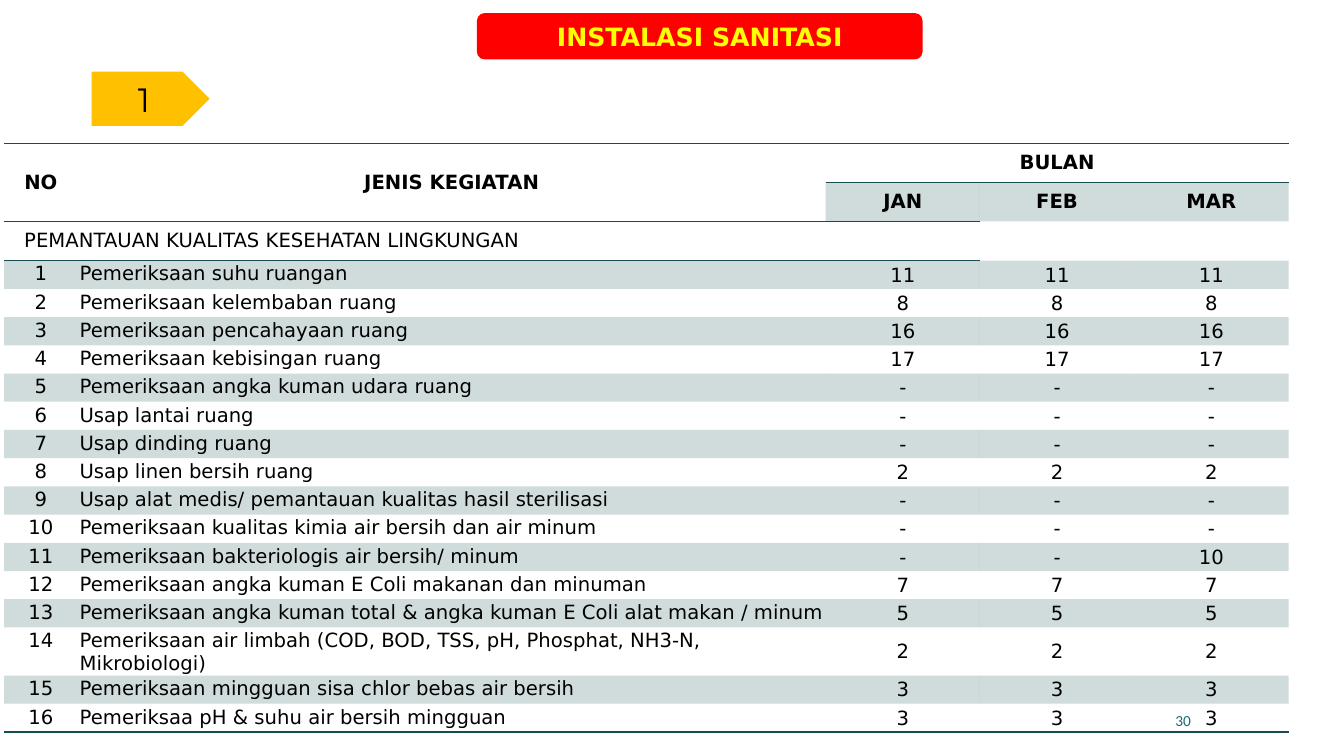
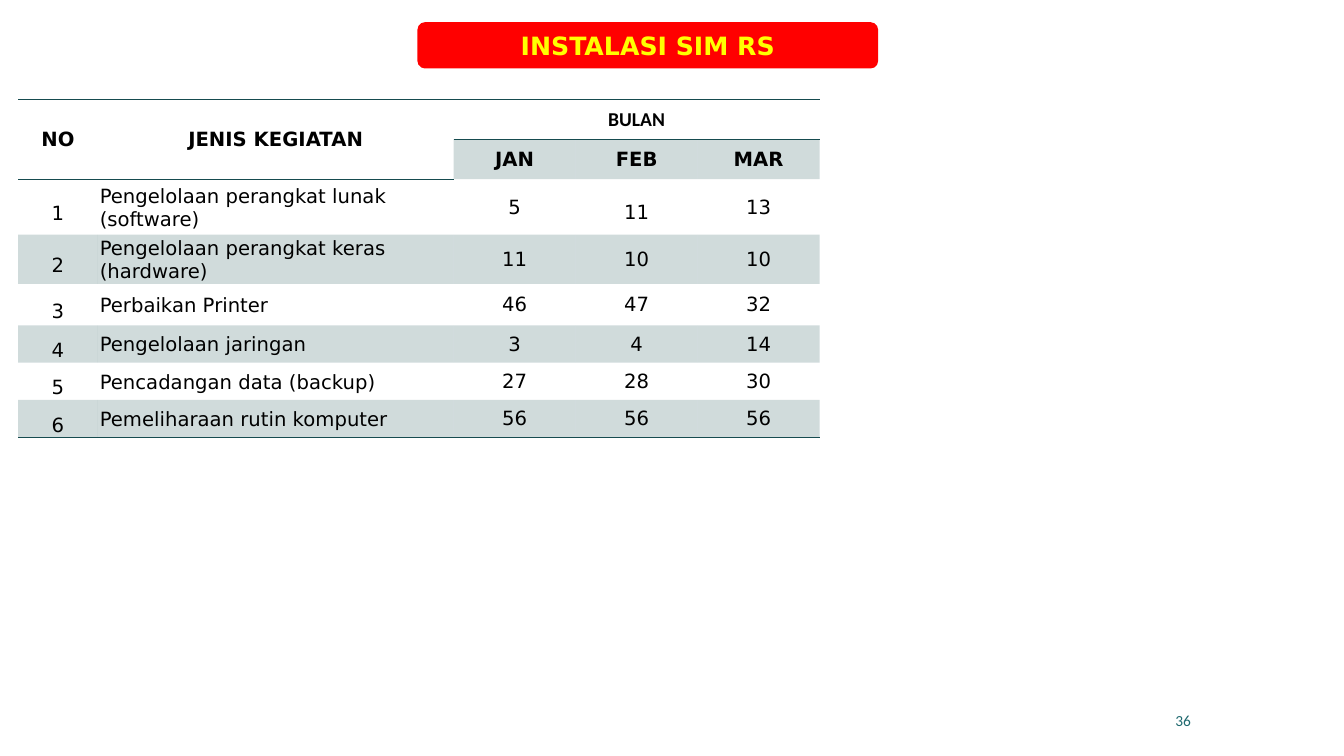
import dataclasses

import lxml.etree
import pptx
import pptx.dml.color
import pptx.enum.shapes
import pptx.enum.text
import pptx.oxml.ns
import pptx.util

PX = 9144  # EMU per px, 100 px to the inch
SHAPE = pptx.enum.shapes.MSO_SHAPE
ALIGN = pptx.enum.text.PP_ALIGN
ANCHOR = pptx.enum.text.MSO_ANCHOR
NO_GRID_STYLE = "{2D5ABB26-0587-4C30-8999-92F81FD0307C}"


@dataclasses.dataclass(frozen=True)
class Theme:
    text: str = "000000"
    line: str = "164B4F"
    band_alpha: int = 20
    title_fill: str = "FF0000"
    title_text: str = "FFFF00"
    tag_fill: str = "FFC000"
    page: str = "1F696F"
    body_font: str = "DejaVu Sans"
    tag_font: str = "Montserrat"
    page_font: str = "Calibri"
    body_size: int = 14
    title_size: int = 18
    tag_size: int = 24
    page_size: int = 11
    header_inset: tuple = (20, 8, 20, 8)
    label_inset: tuple = (2, 2, 2, 0)
    value_inset: tuple = (1, 1, 1, 0)


def rgb(value):
    return pptx.dml.color.RGBColor.from_string(value)


def set_all(obj, values):
    for name, value in values.items():
        setattr(obj, name, value)


def sub(parent, tag, **attrs):
    return lxml.etree.SubElement(parent, pptx.oxml.ns.qn(tag), attrs)


class Deck:
    """Holds the presentation, its theme and the slide being filled."""

    def __init__(self, theme):
        self.theme = theme
        self.prs = pptx.Presentation()
        self.prs.slide_width, self.prs.slide_height = 1333 * PX, 750 * PX
        self.s = None

    def slide(self):
        self.s = self.prs.slides.add_slide(self.prs.slide_layouts[6])

    def put_text(self, tf, text, size, font, color, bold=False,
                 align=ALIGN.CENTER, spacing=None):
        p = tf.paragraphs[0]
        set_all(p, {"alignment": align, "line_spacing": spacing})
        r = p.add_run()
        r.text = text
        set_all(r.font, {"size": pptx.util.Pt(size), "name": font, "bold": bold})
        r.font.color.rgb = rgb(color)

    def shape(self, kind, box, fill, text, *style):
        sp = self.s.shapes.add_shape(kind, *(v * PX for v in box))
        sp.shadow.inherit = False
        sp.fill.solid()
        sp.fill.fore_color.rgb = rgb(fill)
        sp.line.fill.background()
        sp.text_frame.vertical_anchor = ANCHOR.MIDDLE
        self.put_text(sp.text_frame, text, *style)

    def title(self, text, left, top, width):
        t = self.theme
        self.shape(SHAPE.ROUNDED_RECTANGLE, (left, top, width, 46), t.title_fill,
                   text, t.title_size, t.body_font, t.title_text, True)

    def tag(self, text, left, top):
        t = self.theme
        self.shape(SHAPE.PENTAGON, (left, top, 117, 54), t.tag_fill,
                   text, t.tag_size, t.tag_font, t.text)

    def page_number(self, number):
        t = self.theme
        sp = self.s.shapes.add_textbox(880 * PX, 695 * PX, 311 * PX, 40 * PX)
        set_all(sp.text_frame, {"word_wrap": True, "vertical_anchor": ANCHOR.MIDDLE})
        self.put_text(sp.text_frame, str(number), t.page_size, t.page_font, t.page,
                      align=ALIGN.RIGHT)

    def rule(self, cell, side):
        """Draws one edge of a cell; call for lnT before lnB, and before filling."""
        ln = sub(cell._tc.get_or_add_tcPr(), f"a:{side}", w=str(pptx.util.Pt(1)))
        sub(sub(ln, "a:solidFill"), "a:srgbClr", val=self.theme.line)

    def fill_cell(self, cell, banded):
        if not banded:
            cell.fill.background()
            return
        cell.fill.solid()
        cell.fill.fore_color.rgb = rgb(self.theme.line)
        color = cell._tc.tcPr.findall(".//" + pptx.oxml.ns.qn("a:srgbClr"))[-1]
        sub(color, "a:alpha", val=str(self.theme.band_alpha * 1000))

    def cell_text(self, cell, text, inset, anchor=ANCHOR.MIDDLE, font=None, **fmt):
        t = self.theme
        sides = ("margin_left", "margin_top", "margin_right", "margin_bottom")
        set_all(cell, dict(zip(sides, (v * PX for v in inset))))
        cell.vertical_anchor = anchor
        if text:
            self.put_text(cell.text_frame, text, t.body_size, font or t.body_font,
                          t.text, **fmt)

    def activity_table(self, left, top, cols, heights, activities, section=None,
                       label_anchor=ANCHOR.MIDDLE, month_font=None, spaced=()):
        """Monthly table; spaced holds the (row, column) cells set at 1.5 lines."""
        t = self.theme
        rows = [("NO", "JENIS KEGIATAN", "BULAN", "", ""),
                ("", "", "JAN", "FEB", "MAR")]
        if section:
            rows.append((section, "", "", "", ""))
        first = len(rows)
        rows += [(str(n), *activity) for n, activity in enumerate(activities, 1)]
        frame = self.s.shapes.add_table(
            len(rows), len(cols), left * PX, top * PX, sum(cols) * PX, sum(heights) * PX)
        table = frame.table
        set_all(table, {"first_row": False, "horz_banding": False})
        table._tbl.tblPr.find(pptx.oxml.ns.qn("a:tableStyleId")).text = NO_GRID_STYLE
        for col, width in zip(table.columns, cols):
            col.width = width * PX
        for row, height in zip(table.rows, heights):
            row.height = height * PX
        merges = [((0, 0), (1, 0)), ((0, 1), (1, 1)), ((0, 2), (0, 4))]
        if section:
            merges.append(((2, 0), (2, 2)))
        for start, end in merges:
            table.cell(*start).merge(table.cell(*end))

        for i, row in enumerate(rows):
            for j, text in enumerate(row):
                cell = table.cell(i, j)
                if i == 0 or (section and i == 2 and j < 3):
                    self.rule(cell, "lnT")
                if i in (0, len(rows) - 1) or (i == 1 and j < 2):
                    self.rule(cell, "lnB")
                self.fill_cell(cell, i % 2 == 1 and not (i == 1 and j < 2))
                if not text:
                    self.cell_text(cell, "", (0, 0, 0, 0))
                elif i < first:
                    is_section = text == section
                    self.cell_text(cell, text, t.header_inset, bold=not is_section,
                                   align=ALIGN.LEFT if is_section else ALIGN.CENTER,
                                   font=month_font if (i, j) == (0, 2) else None)
                else:
                    self.cell_text(cell, text, t.label_inset if j < 2 else t.value_inset,
                                   label_anchor if j < 2 else ANCHOR.MIDDLE,
                                   align=ALIGN.LEFT if j == 1 else ALIGN.CENTER,
                                   spacing=1.5 if (i, j) in spaced else None)


SANITATION = [
    ("Pemeriksaan suhu ruangan", "11", "11", "11"),
    ("Pemeriksaan kelembaban ruang", "8", "8", "8"),
    ("Pemeriksaan pencahayaan ruang", "16", "16", "16"),
    ("Pemeriksaan kebisingan ruang", "17", "17", "17"),
    ("Pemeriksaan angka kuman udara ruang", "-", "-", "-"),
    ("Usap lantai ruang", "-", "-", "-"),
    ("Usap dinding ruang", "-", "-", "-"),
    ("Usap linen bersih ruang", "2", "2", "2"),
    ("Usap alat medis/ pemantauan kualitas hasil sterilisasi", "-", "-", "-"),
    ("Pemeriksaan kualitas kimia air bersih dan air minum", "-", "-", "-"),
    ("Pemeriksaan bakteriologis air bersih/ minum", "-", "-", "10"),
    ("Pemeriksaan angka kuman E Coli makanan dan minuman", "7", "7", "7"),
    ("Pemeriksaan angka kuman total & angka kuman E Coli alat makan / minum",
     "5", "5", "5"),
    ("Pemeriksaan air limbah (COD, BOD, TSS, pH, Phosphat, NH3-N, Mikrobiologi)",
     "2", "2", "2"),
    ("Pemeriksaan mingguan sisa chlor bebas air bersih", "3", "3", "3"),
    ("Pemeriksaa pH & suhu air bersih mingguan", "3", "3", "3"),
]

INFORMATION_SYSTEM = [
    ("Pengelolaan perangkat lunak (software)", "5", "11", "13"),
    ("Pengelolaan perangkat keras (hardware)", "11", "10", "10"),
    ("Perbaikan Printer", "46", "47", "32"),
    ("Pengelolaan jaringan", "3", "4", "14"),
    ("Pencadangan data (backup)", "27", "28", "30"),
    ("Pemeliharaan rutin komputer", "56", "56", "56"),
]


def main():
    deck = Deck(Theme())

    deck.slide()
    deck.activity_table(4, 142, [73, 742] + [153] * 3,
                        [38] * 3 + [28] * len(SANITATION), SANITATION,
                        section="PEMANTAUAN KUALITAS KESEHATAN LINGKUNGAN",
                        label_anchor=ANCHOR.TOP)
    deck.page_number(30)
    deck.title("INSTALASI SANITASI", 473, 13, 442)
    deck.tag("1", 91, 71)

    deck.slide()
    deck.page_number(36)
    deck.activity_table(18, 99, [79, 353] + [121] * 3,
                        [38, 38, 55, 49, 41, 36, 36, 36], INFORMATION_SYSTEM,
                        month_font=deck.theme.page_font,
                        spaced={(i, 0) for i in range(2, 8)} | {(2, 3)})
    deck.title("INSTALASI SIM RS", 414, 22, 457)

    deck.prs.save("out.pptx")


if __name__ == "__main__":
    main()
